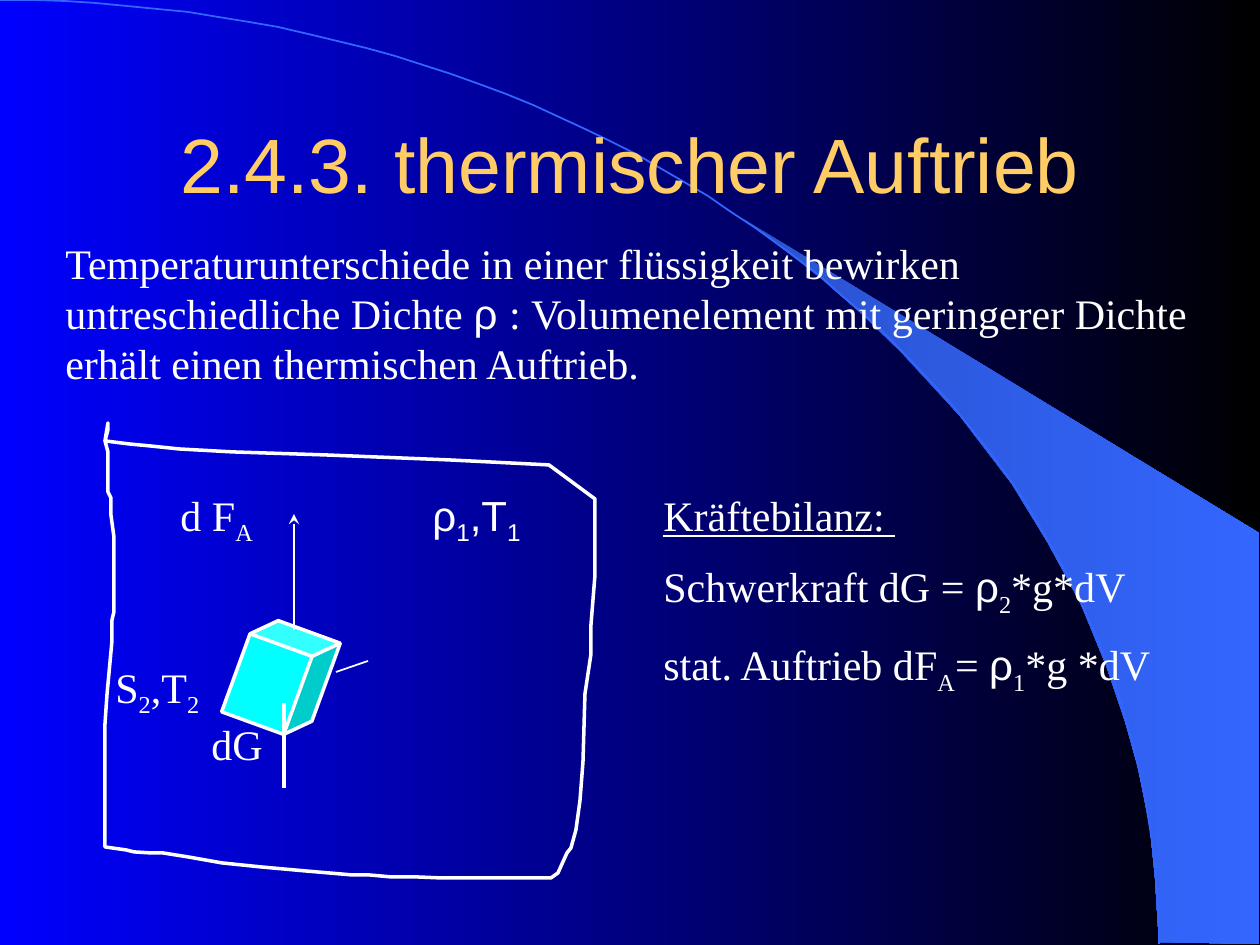
from pptx import Presentation
from pptx.dml.color import RGBColor
from pptx.enum.shapes import MSO_CONNECTOR as CONN, MSO_SHAPE as SHAPE
from pptx.enum.text import MSO_ANCHOR as ANCHOR, PP_ALIGN as ALIGN
from pptx.oxml.ns import qn
from pptx.util import Emu, Pt
from lxml.etree import SubElement

PX = 914400 / 126


class Theme:
    white = RGBColor.from_string("FFFFFF")
    title = RGBColor.from_string("FFCC66")
    cube = RGBColor.from_string("00FFFF")
    arc = RGBColor.from_string("3366FF")
    bg = ("0000FF", "000000")
    sweep = ("2952CC", "3366FF")
    sans, serif = "Arial", "Times New Roman"
    title_size, text_size = Pt(44), Pt(24)
    thin, thick = Pt(1), Pt(2)


prs = Presentation()
prs.slide_width, prs.slide_height = Emu(round(1260 * PX)), Emu(round(945 * PX))
s = prs.slides.add_slide(prs.slide_layouts[6])


def add_text(box, paragraphs, size=Theme.text_size, color=Theme.white):
    """Paragraphs are lists of (text, font, style); style is "", "sub" or "u"."""
    tf = s.shapes.add_textbox(*(Emu(round(v * PX)) for v in box)).text_frame
    tf.word_wrap = True
    for i, runs in enumerate(paragraphs):
        p = tf.paragraphs[0] if i == 0 else tf.add_paragraph()
        p.space_before = Pt(12)
        for text, font, style in runs:
            r = p.add_run()
            r.text = text
            r.font.name, r.font.size, r.font.color.rgb = font, size, color
            if style == "u":
                r.font.underline = True
            if style == "sub":
                r.font._element.set("baseline", "-25000")
    return tf


def add_outline(points, close=False):
    fb = s.shapes.build_freeform(*points[0], scale=PX)
    fb.add_line_segments(points[1:], close=close)
    sp = fb.convert_to_shape()
    sp.shadow.inherit = False
    sp.fill.background()
    sp.line.color.rgb = Theme.white
    return sp


# Background with the blue sweep and its arc
sweep = add_outline([
    (1159, 942), (1259, 944), (1259, 533), (742, 218), (786, 251), (823, 280),
    (863, 315), (902, 353), (960, 416), (1012, 484), (1048, 543), (1081, 604),
    (1106, 665), (1125, 721), (1138, 767), (1150, 827), (1155, 877)], close=True)
sweep.line.fill.background()
for fill, colors in ((s.background.fill, Theme.bg), (sweep.fill, Theme.sweep)):
    fill.gradient()
    fill.gradient_angle = 0
    for stop, pos, color in zip(fill.gradient_stops, (0, 1), colors):
        stop.position = pos
        stop.color.rgb = RGBColor.from_string(color)

curve = []
for i in range(61):
    t = i / 60
    u = 1 - t
    curve.append((round(3 * u * u * t * 640 + (3 * u * t * t + t ** 3) * 1159),
                  round(3 * u * t * t * 422 + t ** 3 * 944)))
arc = add_outline(curve)
arc.line.color.rgb, arc.line.width = Theme.arc, Theme.thin

# Title and introduction
sans, serif = Theme.sans, Theme.serif
tf = add_text((95, 84, 1071, 158), [[("2.4.3. thermischer Auftrieb", sans, "")]],
              Theme.title_size, Theme.title)
tf.vertical_anchor = ANCHOR.MIDDLE
tf.paragraphs[0].alignment = ALIGN.CENTER
tf.paragraphs[0].space_before = Pt(0)
add_text((53, 231, 1166, 164), [[
    ("Temperaturunterschiede in einer flüssigkeit bewirken untreschiedliche Dichte ", serif, ""),
    ("ρ ", sans, ""),
    (": Volumenelement mit geringerer Dichte erhält einen thermischen Auftrieb.", serif, "")]])

# Fluid region
region = add_outline([
    (105, 441), (129, 444), (150, 446), (179, 449), (233, 452), (326, 455),
    (449, 460), (549, 465), (595, 499), (595, 575), (591, 625), (591, 654),
    (585, 694), (583, 762), (580, 801), (576, 830), (571, 848), (567, 853),
    (558, 873), (551, 878), (441, 878), (416, 877), (391, 877), (369, 875),
    (352, 875), (305, 871), (261, 867), (222, 863), (188, 857), (163, 853),
    (151, 853), (134, 852), (126, 850), (105, 847), (105, 724), (107, 695),
    (112, 641), (112, 620), (114, 612), (114, 537), (111, 515), (111, 498),
    (108, 492), (108, 452), (105, 441), (108, 423), (108, 430)], close=True)
region.line.width = Theme.thick

# Volume element and forces
cube = s.shapes.add_shape(SHAPE.CUBE, *(Emu(round(v * PX)) for v in (237, 625, 88, 105)))
cube.rotation = 20
cube.shadow.inherit = False
cube.fill.solid()
cube.fill.fore_color.rgb = Theme.cube
cube.line.color.rgb, cube.line.width = Theme.white, Theme.thick

for ends, width, head in (((294, 630, 294, 514), Theme.thin, "stealth"),
                          ((336, 672, 368, 661), Theme.thin, None),
                          ((284, 703, 284, 788), Theme.thick, None)):
    line = s.shapes.add_connector(CONN.STRAIGHT, *(Emu(round(v * PX)) for v in ends))
    line.line.color.rgb, line.line.width = Theme.white, width
    if head:
        SubElement(line.line._get_or_add_ln(), qn("a:tailEnd"), type=head)
    SubElement(line._element.spPr, qn("a:effectLst"))

for box, runs in (
        ((168, 483, 120, 68), [("d F", serif, ""), ("A", serif, "sub")]),
        ((420, 483, 140, 68), [("ρ", sans, ""), ("1", sans, "sub"),
                               (",Τ", sans, ""), ("1", sans, "sub")]),
        ((103, 655, 125, 68), [("S", serif, ""), ("2", serif, "sub"),
                               (",T", serif, ""), ("2", serif, "sub")]),
        ((199, 712, 80, 60), [("dG", serif, "")])):
    add_text(box, [runs])

# Force balance
add_text((651, 483, 577, 214), [
    [("Kräftebilanz: ", serif, "u")],
    [("Schwerkraft dG = ", serif, ""), ("ρ", sans, ""), ("2", serif, "sub"),
     ("*g*dV", serif, "")],
    [("stat. Auftrieb dF", serif, ""), ("A", serif, "sub"), ("= ", serif, ""),
     ("ρ", sans, ""), ("1", serif, "sub"), ("*g *dV", serif, "")]])

prs.save("out.pptx")
